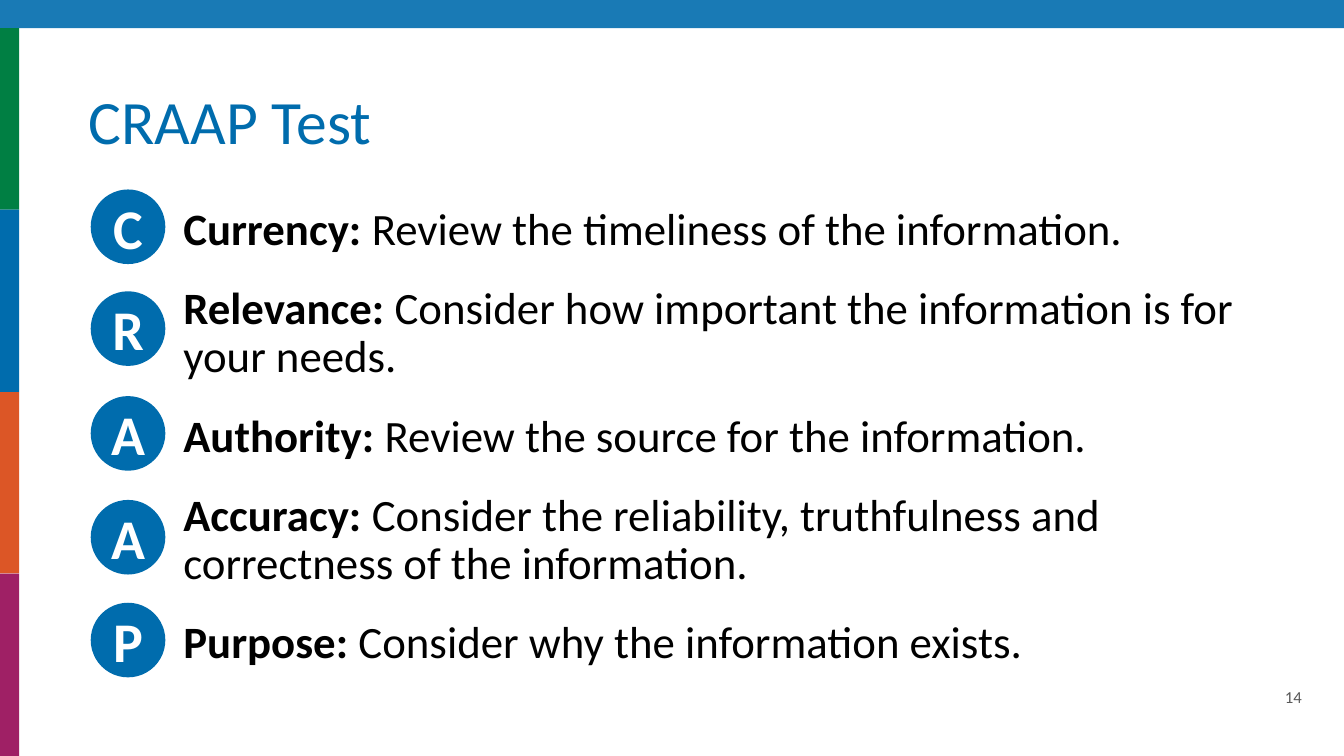
import pptx
import pptx.dml.color
import pptx.enum.shapes
import pptx.enum.text
import pptx.oxml
import pptx.oxml.ns
import pptx.util

PX = 9144  # EMU per px, 100 px to the inch
SLIDE_W, SLIDE_H = 1333, 750
BANNER_H = 28
BLUE = "006CAD"
FONT = "Calibri"
STRIPE_COLOURS = ["007F43", BLUE, "DC5626", "9F2065"]
CRITERIA = [
    (188, "Currency: ", "Review the timeliness of the information."),
    (289, "Relevance: ", "Consider how important the information is for your needs."),
    (393, "Authority: ", "Review the source for the information."),
    (496, "Accuracy: ", "Consider the reliability, truthfulness and correctness of the information."),
    (598, "Purpose: ", "Consider why the information exists."),
]
SHAPES = pptx.enum.shapes.MSO_SHAPE
ALIGN = pptx.enum.text.PP_ALIGN
ANCHOR = pptx.enum.text.MSO_ANCHOR


def rgb(colour):
    return pptx.dml.color.RGBColor.from_string(colour)


def box(*lengths):
    return [length * PX for length in lengths]


def style(font, size, colour, bold=False):
    font.name = FONT
    font.size = pptx.util.Pt(size)
    font.color.rgb = rgb(colour)
    font.bold = bold


def add_filled(slide, kind, place, colour):
    shape = slide.shapes.add_shape(kind, *box(*place))
    shape.shadow.inherit = False
    shape.fill.solid()
    shape.fill.fore_color.rgb = rgb(colour)
    shape.line.fill.background()
    return shape


def add_frame(slide):
    """Draw the translucent banner and the four stripes down the left edge."""
    banner = add_filled(slide, SHAPES.RECTANGLE, (0, 0, SLIDE_W, BANNER_H), BLUE)
    tint = banner.fill._xPr.find(".//" + pptx.oxml.ns.qn("a:srgbClr"))
    tint.append(pptx.oxml.parse_xml(
        f'<a:alpha {pptx.oxml.ns.nsdecls("a")} val="90000"/>'))
    edges = [BANNER_H + (SLIDE_H - BANNER_H) * i // 4 for i in range(5)]
    for top, bottom, colour in zip(edges, edges[1:], STRIPE_COLOURS):
        add_filled(slide, SHAPES.RECTANGLE, (0, top, 19, bottom - top), colour)


def add_title(slide, text):
    title = slide.shapes.title
    title.left, title.top, title.width, title.height = box(78, 50, 1179, 112)
    frame = title.text_frame
    frame.text = text
    frame.vertical_anchor = ANCHOR.BOTTOM
    heading = frame.paragraphs[0]
    heading.alignment = ALIGN.LEFT
    heading.line_spacing = 0.9
    style(heading.runs[0].font, 44, BLUE)


def add_criteria(slide):
    frame = slide.shapes.add_textbox(*box(172, 200, 1118, 484)).text_frame
    frame.word_wrap = True
    for i, (_, term, advice) in enumerate(CRITERIA):
        criterion = frame.add_paragraph() if i else frame.paragraphs[0]
        criterion.line_spacing = 0.9
        if i:
            criterion.space_before = pptx.util.Pt(22)
        for text, bold in ((term, True), (advice, False)):
            run = criterion.add_run()
            run.text = text
            style(run.font, 32, "000000", bold)


def add_badge(slide, top, letter):
    badge = add_filled(slide, SHAPES.OVAL, (90, top, 74, 74), BLUE)
    frame = badge.text_frame
    frame.text = letter
    frame.word_wrap = False
    frame.vertical_anchor = ANCHOR.MIDDLE
    frame.paragraphs[0].alignment = ALIGN.CENTER
    style(frame.paragraphs[0].runs[0].font, 40, "FFFFFF", True)


def add_page_number(slide, number):
    frame = slide.shapes.add_textbox(*box(1058, 671, 243, 40)).text_frame
    frame.text = number
    frame.word_wrap = True
    frame.vertical_anchor = ANCHOR.MIDDLE
    frame.paragraphs[0].alignment = ALIGN.RIGHT
    style(frame.paragraphs[0].runs[0].font, 12, "595959")


def main():
    deck = pptx.Presentation()
    deck.slide_width, deck.slide_height = box(SLIDE_W, SLIDE_H)
    slide = deck.slides.add_slide(deck.slide_layouts[5])
    add_frame(slide)
    add_title(slide, "CRAAP Test")
    add_criteria(slide)
    for top, term, _ in CRITERIA:
        add_badge(slide, top, term[0])
    add_page_number(slide, "14")
    deck.save("out.pptx")


if __name__ == "__main__":
    main()
